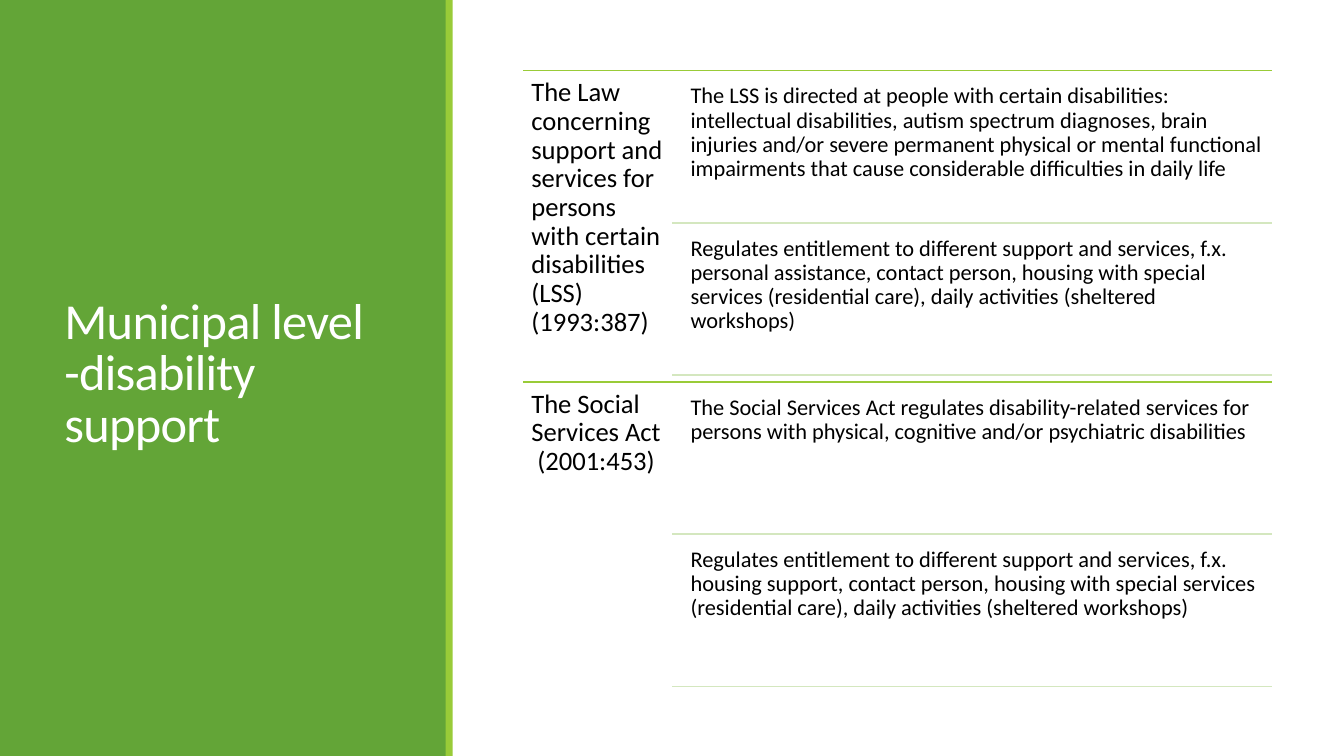
from pptx import Presentation
from pptx.dml.color import RGBColor
from pptx.enum.shapes import MSO_CONNECTOR, MSO_SHAPE
from pptx.enum.text import MSO_ANCHOR
from pptx.oxml.ns import qn
from pptx.util import Inches, Pt
from lxml import etree

RECTANGLE = MSO_SHAPE.RECTANGLE
STRAIGHT = MSO_CONNECTOR.STRAIGHT
TOP, MIDDLE = MSO_ANCHOR.TOP, MSO_ANCHOR.MIDDLE

GREEN, LIME, PALE = "63A537", "99CB38", "D4E7BF"
WHITE, BLACK = "FFFFFF", "000000"

LAWS = [
    ("The Law concerning support and services for persons with certain "
     "disabilities (LSS) (1993:387)",
     ["The LSS is directed at people with certain disabilities: intellectual "
      "disabilities, autism spectrum diagnoses, brain injuries and/or severe "
      "permanent physical or mental functional impairments that cause "
      "considerable difficulties in daily life",
      "Regulates entitlement to different support and services, f.x. personal "
      "assistance, contact person, housing with special services (residential "
      "care), daily activities (sheltered workshops)"]),
    ("The Social Services Act  (2001:453)",
     ["The Social Services Act regulates disability-related services for "
      "persons with physical, cognitive and/or psychiatric disabilities",
      "Regulates entitlement to different support and services, f.x. housing "
      "support, contact person, housing with special services (residential "
      "care), daily activities (sheltered workshops)"]),
]


def rgb(value):
    return RGBColor.from_string(value)


class SlideBuilder:
    font = "Calibri"
    rule_width = 1.25

    def __init__(self, slide):
        self.slide = slide
        slide.background.fill.solid()
        slide.background.fill.fore_color.rgb = rgb(WHITE)

    def panel(self, left, top, width, height, color):
        panel = self.slide.shapes.add_shape(
            RECTANGLE, Inches(left), Inches(top), Inches(width), Inches(height))
        panel.shadow.inherit = False
        panel.fill.solid()
        panel.fill.fore_color.rgb = rgb(color)
        panel.line.fill.background()

    def rule(self, left, right, y, color):
        rule = self.slide.shapes.add_connector(
            STRAIGHT, Inches(left), Inches(y), Inches(right), Inches(y))
        rule.line.color.rgb = rgb(color)
        rule.line.width = Pt(self.rule_width)
        etree.SubElement(rule._element.spPr, qn("a:effectLst"))

    def text(self, left, top, width, height, words, size, color=BLACK,
             inset=(0.08, 0.08), anchor=TOP, leading=0.9, tracking=0):
        box = self.slide.shapes.add_textbox(
            Inches(left), Inches(top), Inches(width), Inches(height))
        frame = box.text_frame
        frame.word_wrap = True
        frame.vertical_anchor = anchor
        frame.margin_left = frame.margin_right = Inches(inset[0])
        frame.margin_top = frame.margin_bottom = Inches(inset[1])
        paragraph = frame.paragraphs[0]
        paragraph.line_spacing = leading
        run = paragraph.add_run()
        run.text = words
        run.font.name = self.font
        run.font.size = Pt(size)
        run.font.color.rgb = rgb(color)
        if tracking:
            run._r.get_or_add_rPr().set("spc", str(round(tracking * 100)))


def main():
    deck = Presentation()
    deck.slide_width, deck.slide_height = Inches(13.33), Inches(7.5)
    builder = SlideBuilder(deck.slides.add_slide(deck.slide_layouts[6]))

    builder.panel(0, 0, 4.43, 7.5, GREEN)
    builder.text(0.54, 0.57, 3.37, 6.31, "Municipal level -disability support",
                 36, WHITE, inset=(0.1, 0.05), anchor=MIDDLE, leading=0.85,
                 tracking=-0.5)
    builder.panel(4.42, 0, 0.07, 7.5, LIME)

    law_left, detail_rule_left, detail_left, right = 5.19, 6.67, 6.78, 12.62
    first_top, law_height = 0.7, 3.09
    detail_height, gap = 1.44, 0.07

    for law_index, (law, details) in enumerate(LAWS):
        law_top = first_top + law_index * law_height
        builder.rule(law_left, right, law_top, LIME)
        builder.text(law_left, law_top, 1.49, law_height, law, 19)
        for detail_index, detail in enumerate(details):
            detail_top = law_top + gap + detail_index * (detail_height + gap)
            builder.text(detail_left, detail_top, right - detail_left,
                         detail_height, detail, 16, inset=(0.07, 0.07))
            builder.rule(detail_rule_left, right, detail_top + detail_height, PALE)

    deck.save("out.pptx")


if __name__ == "__main__":
    main()
